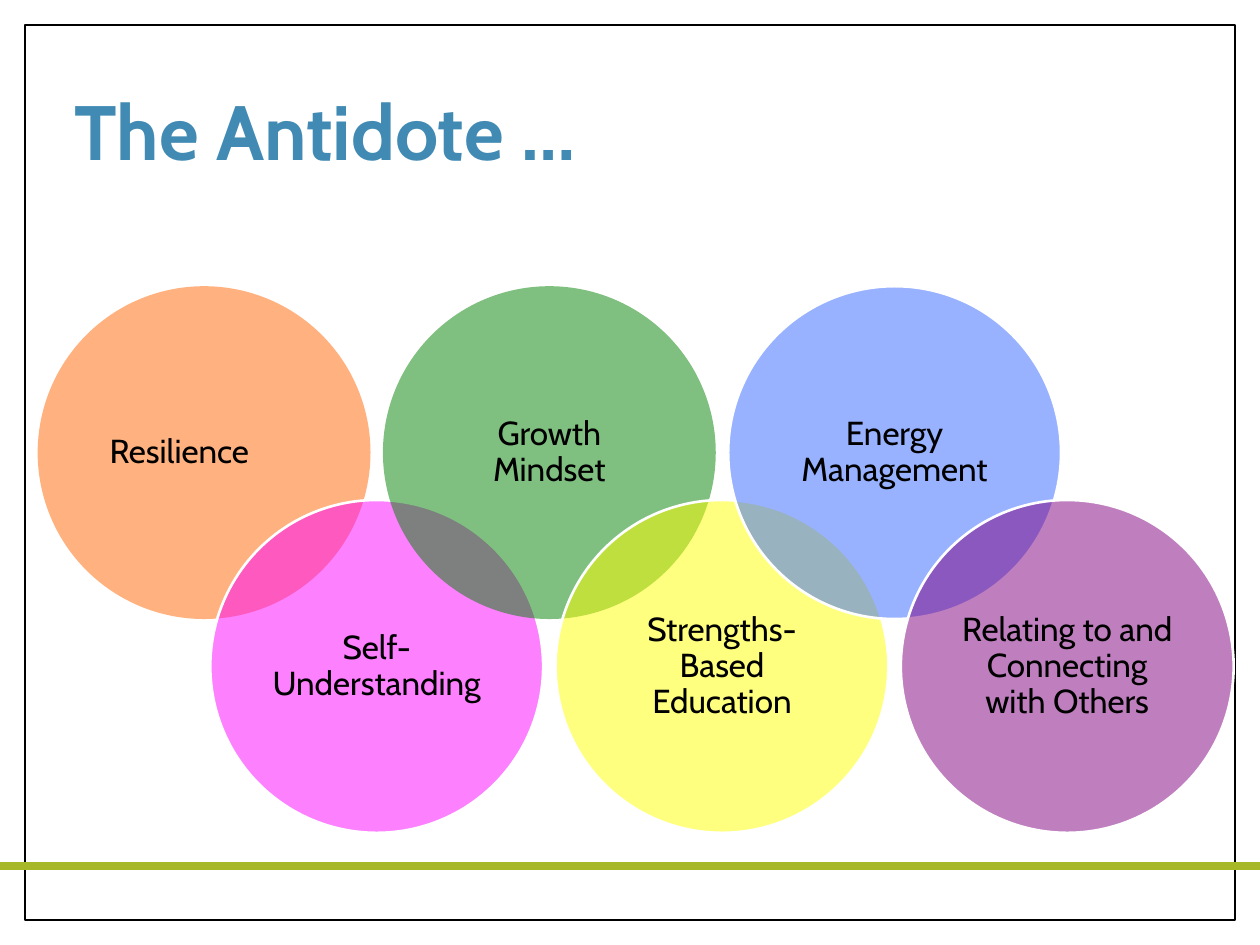
from lxml import etree
from pptx import Presentation
from pptx.dml.color import RGBColor
from pptx.enum.shapes import MSO_SHAPE
from pptx.enum.text import MSO_ANCHOR, PP_ALIGN
from pptx.oxml.ns import qn
from pptx.util import Cm, Pt

RECTANGLE, OVAL = MSO_SHAPE.RECTANGLE, MSO_SHAPE.OVAL
MIDDLE = MSO_ANCHOR.MIDDLE
LEFT, CENTER = PP_ALIGN.LEFT, PP_ALIGN.CENTER

FONT = "Cabin"
DIAMETER = 6.71
FIRST_LEFT = 0.76
STEP = 3.48
ROW_TOPS = (5.77, 10.08)
LABEL_MARGIN = 0.98
TOPICS = [
    ("Resilience\t", "FF6600", 0),
    ("Self-Understanding", "FC02FF", 1.5),
    ("Growth Mindset", "008000", 0),
    ("Strengths-Based Education", "FFFF00", 1.5),
    ("Energy Management", "3366FF", 1.5),
    ("Relating to and Connecting with Others", "800080", 1.5),
]


def color(hex_code):
    return RGBColor.from_string(hex_code)


def add_filled(slide, preset, box, fill, line=None, line_width=0, opacity=100):
    shape = slide.shapes.add_shape(preset, *map(Cm, box))
    shape.shadow.inherit = False
    shape.fill.solid()
    shape.fill.fore_color.rgb = color(fill)
    if opacity < 100:
        fill_color = shape.fill._xPr.find(qn("a:solidFill"))[0]
        etree.SubElement(fill_color, qn("a:alpha")).set("val", str(opacity * 1000))
    if line_width:
        shape.line.color.rgb = color(line)
        shape.line.width = Pt(line_width)
    else:
        shape.line.fill.background()


def add_text(slide, text, box, size, hex_code="000000", bold=False, align=LEFT,
             insets=(0.25, 0.13)):
    frame = slide.shapes.add_textbox(*map(Cm, box)).text_frame
    frame.word_wrap = True
    frame.vertical_anchor = MIDDLE
    frame.margin_left = frame.margin_right = Cm(insets[0])
    frame.margin_top = frame.margin_bottom = Cm(insets[1])
    paragraph = frame.paragraphs[0]
    paragraph.alignment = align
    paragraph.line_spacing = 0.9
    run = paragraph.add_run()
    run.text = text
    run.font.name = FONT
    run.font.size = Pt(size)
    run.font.bold = bold
    run.font.color.rgb = color(hex_code)


def add_topic(slide, index, label, fill, outline_width):
    left = FIRST_LEFT + index * STEP
    top = ROW_TOPS[index % 2]
    add_filled(slide, OVAL, (left, top, DIAMETER, DIAMETER), fill,
               "FFFFFF", outline_width, opacity=50)
    side = DIAMETER - 2 * LABEL_MARGIN
    add_text(slide, label, (left + LABEL_MARGIN, top + LABEL_MARGIN, side, side),
             19, align=CENTER, insets=(0.2, 0.2))


def main():
    presentation = Presentation()
    presentation.slide_width = Cm(25.4)
    presentation.slide_height = Cm(19.05)
    slide = presentation.slides.add_slide(presentation.slide_layouts[6])
    add_filled(slide, RECTANGLE, (0.5, 0.5, 24.4, 18.05), "FFFFFF", "000000", 1)
    add_filled(slide, RECTANGLE, (0, 17.38, 25.4, 0.16), "A6B727")
    add_text(slide, "The Antidote …", (1.25, 0.78, 21.72, 3.89), 44, "418AB3", bold=True)
    for index, topic in enumerate(TOPICS):
        add_topic(slide, index, *topic)
    presentation.save("out.pptx")


if __name__ == "__main__":
    main()
